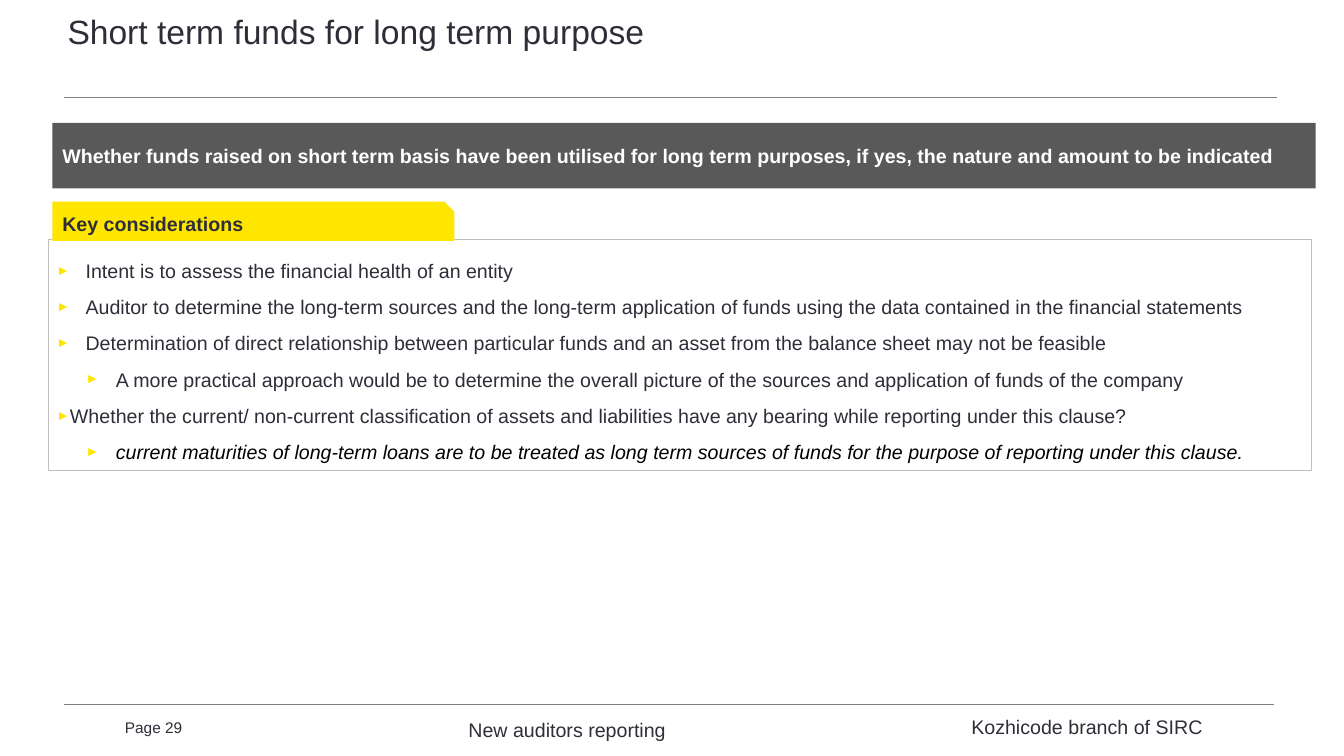
from lxml.etree import SubElement
from pptx import Presentation
from pptx.dml.color import RGBColor
from pptx.enum.shapes import MSO_CONNECTOR as CONN, MSO_SHAPE as SHAPE
from pptx.enum.text import MSO_ANCHOR as ANCHOR, PP_ALIGN as ALIGN
from pptx.oxml.ns import qn
from pptx.util import Inches, Pt

COLORS = {"ink": "2E2E38", "black": "000000", "white": "FFFFFF", "yellow": "FFE600",
          "band": "595959", "rule": "808080", "border": "BFBFBF"}


def rgb(name):
    return RGBColor.from_string(COLORS[name])


def write(p, text, size=14, color="ink", bold=False, italic=False, align=ALIGN.LEFT,
          line=None, before=0, after=0):
    """Put one formatted run in a paragraph."""
    p.alignment = align
    p.space_before, p.space_after = Pt(before), Pt(after)
    if line:
        p.line_spacing = line
    r = p.add_run()
    r.text = text
    r.font.name, r.font.size = "Arial", Pt(size)
    r.font.bold, r.font.italic = bold, italic
    r.font.color.rgb = rgb(color)


class SlideBuilder:
    def __init__(self, slide, bullet="►", bullet_color="yellow", bullet_size=70):
        self.s = slide
        self.bullet, self.bullet_color, self.bullet_size = bullet, bullet_color, bullet_size

    def frame(self, sp, insets=(0.1, 0.05, 0.1, 0.05), anchor=ANCHOR.TOP):
        tf = sp.text_frame
        tf.word_wrap, tf.vertical_anchor = True, anchor
        tf.margin_left, tf.margin_top, tf.margin_right, tf.margin_bottom = map(Inches, insets)
        return tf

    def rule(self, x1, x2, y):
        c = self.s.shapes.add_connector(CONN.STRAIGHT, *map(Inches, (x1, y, x2, y)))
        c.line.color.rgb, c.line.width = rgb("rule"), Pt(0.75)
        SubElement(c._element.spPr, qn("a:effectLst"))

    def text(self, box, text, insets=(0.1, 0.05, 0.1, 0.05), **fmt):
        sp = self.s.shapes.add_textbox(*map(Inches, box))
        write(self.frame(sp, insets).paragraphs[0], text, **fmt)

    def shape(self, kind, box, fill=None, line=None):
        sp = self.s.shapes.add_shape(kind, *map(Inches, box))
        sp.shadow.inherit = False
        if fill:
            sp.fill.solid()
            sp.fill.fore_color.rgb = rgb(fill)
        else:
            sp.fill.background()
        if line:
            sp.line.color.rgb, sp.line.width = rgb(line), Pt(0.75)
        else:
            sp.line.fill.background()
        return sp

    def bullets(self, sp, items):
        tf = self.frame(sp, (0.08, 0.12, 0.08, 0.08))
        for i, (text, level, left, hang, fmt) in enumerate(items):
            p = tf.paragraphs[0] if i == 0 else tf.add_paragraph()
            p.level = level
            write(p, text, line=1.3, after=4, **fmt)
            pPr = p._p.get_or_add_pPr()
            pPr.set("marL", str(Inches(left)))
            pPr.set("indent", str(-Inches(hang)))
            clr = SubElement(pPr, qn("a:buClr"))
            SubElement(clr, qn("a:srgbClr"), val=COLORS[self.bullet_color])
            SubElement(pPr, qn("a:buSzPct"), val=str(self.bullet_size * 1000))
            SubElement(pPr, qn("a:buFont"), typeface="Arial")
            SubElement(pPr, qn("a:buChar"), char=self.bullet)


def main():
    prs = Presentation()
    prs.slide_width, prs.slide_height = Inches(13.34), Inches(7.5)
    b = SlideBuilder(prs.slides.add_slide(prs.slide_layouts[6]))

    # Rules and footer
    b.rule(0.64, 12.68, 0.97)
    b.rule(0.64, 12.65, 6.99)
    b.text((3.94, 7.07, 3.38, 0.2), "New auditors reporting", align=ALIGN.CENTER)
    b.text((1.24, 7.08, 0.73, 0.2), "Page 29", insets=(0, 0.05, 0.1, 0.05), size=11)
    b.text((9.1, 7.04, 3.38, 0.2), "Kozhicode branch of SIRC", align=ALIGN.CENTER)

    # Title
    b.text((0.67, 0.17, 12.01, 0.65), "Short term funds for long term purpose",
           insets=(0, 0, 0, 0), size=24, line=0.85)

    # Considerations: text, level, left indent, hanging indent, format
    top, sub = (0, 0.29, 0.29), (1, 0.59, 0.3)
    items = [
        ("Intent is to assess the financial health of an entity", *top, {}),
        ("Auditor to determine the long-term sources and the long-term application of funds "
         "using the data contained in the financial statements", *top, {}),
        ("Determination of direct relationship between particular funds and an asset from "
         "the balance sheet may not be feasible", *top, {}),
        ("A more practical approach would be to determine the overall picture of the sources "
         "and application of funds of the company", *sub, {}),
        ("Whether the current/ non-current classification of assets and liabilities have any "
         "bearing while reporting under this clause?", 0, 0.09, 0.3, {}),
        ("current maturities of long-term loans are to be treated as long term sources of "
         "funds for the purpose of reporting under this clause.", *sub,
         {"color": "black", "italic": True}),
    ]
    b.bullets(b.shape(SHAPE.RECTANGLE, (0.48, 2.38, 12.54, 2.29), line="border"), items)

    # Yellow tab
    tab = b.shape(SHAPE.SNIP_1_RECTANGLE, (0.52, 2, 3.99, 0.39), fill="yellow")
    tab.adjustments[0] = 0.26
    write(b.frame(tab).paragraphs[0], "Key considerations", bold=True)

    # Clause band
    band = b.shape(SHAPE.RECTANGLE, (0.52, 1.22, 12.54, 0.65), fill="band")
    write(b.frame(band, anchor=ANCHOR.MIDDLE).paragraphs[0],
          "Whether funds raised on short term basis have been utilised for long term purposes, "
          "if yes, the nature and amount to be indicated",
          color="white", bold=True, before=3, after=3)

    prs.save("out.pptx")


if __name__ == "__main__":
    main()
